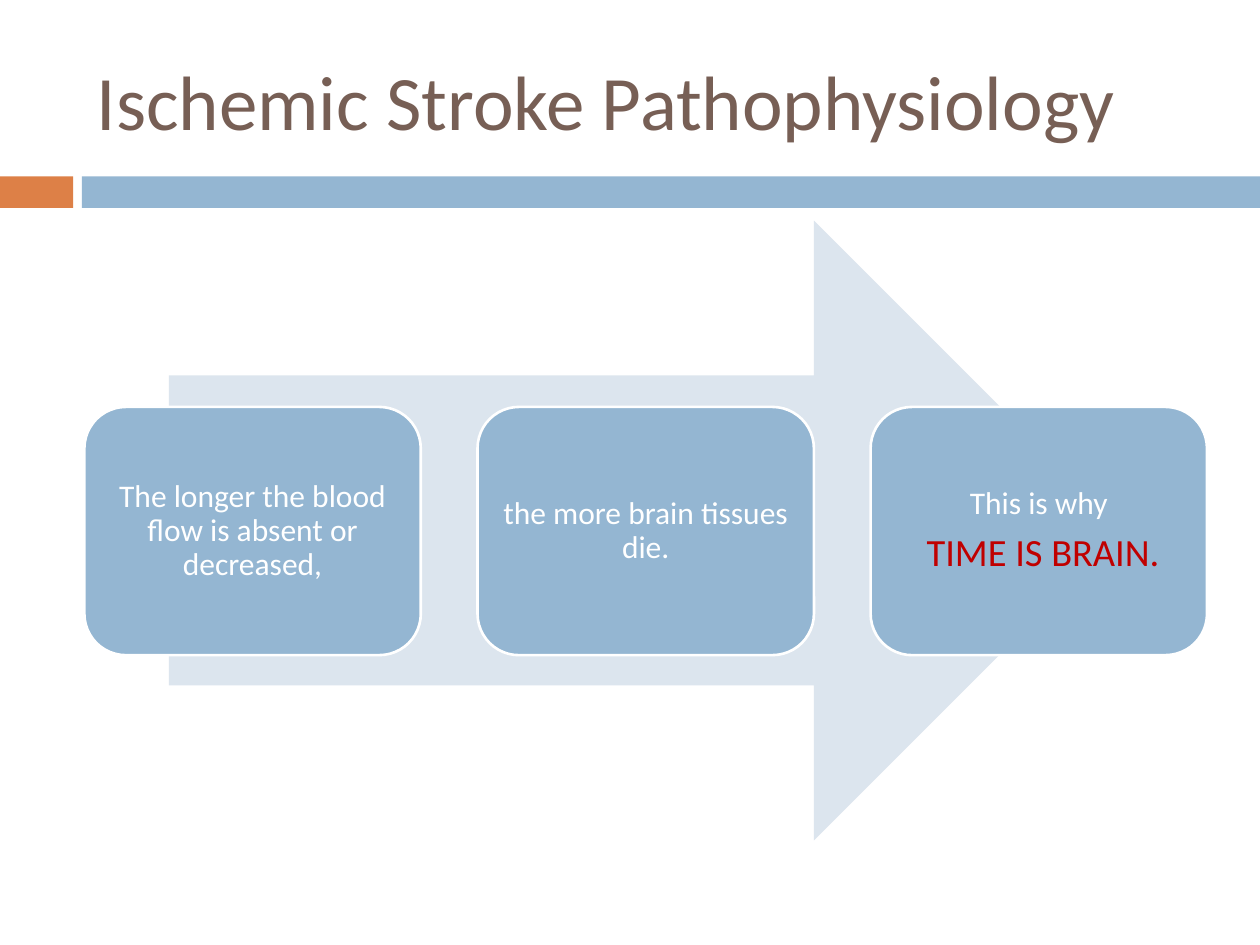
from dataclasses import dataclass

from pptx import Presentation
from pptx.dml.color import RGBColor
from pptx.enum.shapes import MSO_SHAPE
from pptx.enum.text import MSO_ANCHOR, PP_ALIGN
from pptx.util import Inches, Pt

COLORS = {
    "title": "775F55",
    "orange": "DD8047",
    "blue": "94B6D2",
    "pale": "DCE5EE",
    "white": "FFFFFF",
    "red": "C00000",
}
FONT = "Calibri"


@dataclass(frozen=True)
class Frame:
    left: float
    top: float
    width: float
    height: float

    def lengths(self) -> list:
        return [Inches(n) for n in (self.left, self.top, self.width, self.height)]


@dataclass(frozen=True)
class Line:
    text: str
    size: float = 18
    color: str = "white"


def color_of(name: str) -> RGBColor:
    return RGBColor.from_string(COLORS[name])


def add_filled(page, kind, frame: Frame, fill: str, outline: str = ""):
    """Draw a preset shape with a flat fill and an optional outline."""
    shape = page.shapes.add_shape(kind, *frame.lengths())
    shape.shadow.inherit = False
    shape.fill.solid()
    shape.fill.fore_color.rgb = color_of(fill)
    if outline:
        shape.line.color.rgb = color_of(outline)
        shape.line.width = Pt(1.5)
    else:
        shape.line.fill.background()
    return shape


def write_text(box, lines: list[Line], *, align=PP_ALIGN.LEFT,
               margins: tuple[float, float] = (0.1, 0.05),
               line_spacing: float = 1.0, space_after: float = 0) -> None:
    """Fill a shape or text box, one paragraph for each line."""
    text_frame = box.text_frame
    text_frame.word_wrap = True
    text_frame.vertical_anchor = MSO_ANCHOR.MIDDLE
    text_frame.margin_left = text_frame.margin_right = Inches(margins[0])
    text_frame.margin_top = text_frame.margin_bottom = Inches(margins[1])
    for index, line in enumerate(lines):
        para = text_frame.add_paragraph() if index else text_frame.paragraphs[0]
        para.alignment = align
        para.line_spacing = line_spacing
        para.space_after = Pt(space_after)
        span = para.add_run()
        span.text = line.text
        span.font.name = FONT
        span.font.size = Pt(line.size)
        span.font.color.rgb = color_of(line.color)


STEPS = [
    [Line("The longer the blood flow is absent or decreased,")],
    [Line("the more brain tissues die.")],
    [Line("This is why"), Line(" TIME IS BRAIN.", size=22, color="red")],
]
FIRST_STEP = Frame(0.67, 3.23, 2.67, 1.97)
STEP_PITCH = 3.12


def main() -> None:
    deck = Presentation()
    deck.slide_width, deck.slide_height = Inches(10), Inches(7.5)
    page = deck.slides.add_slide(deck.slide_layouts[6])

    # Two-part band under the title
    add_filled(page, MSO_SHAPE.RECTANGLE, Frame(0, 1.4, 0.58, 0.25), "orange")
    add_filled(page, MSO_SHAPE.RECTANGLE, Frame(0.65, 1.4, 9.35, 0.25), "blue")

    # Title
    title = page.shapes.add_textbox(*Frame(0.67, 0.25, 9.33, 1.08).lengths())
    write_text(title, [Line("Ischemic Stroke Pathophysiology", 44, "title")])

    # Arrow behind the steps
    add_filled(page, MSO_SHAPE.RIGHT_ARROW, Frame(1.34, 1.75, 7.58, 4.92), "pale")

    # Steps, left to right
    for index, lines in enumerate(STEPS):
        frame = Frame(FIRST_STEP.left + index * STEP_PITCH, FIRST_STEP.top,
                      FIRST_STEP.width, FIRST_STEP.height)
        step = add_filled(page, MSO_SHAPE.ROUNDED_RECTANGLE, frame, "blue", "white")
        write_text(step, lines, align=PP_ALIGN.CENTER, margins=(0.07, 0.07),
                   line_spacing=0.9, space_after=6.3)

    deck.save("out.pptx")


if __name__ == "__main__":
    main()
